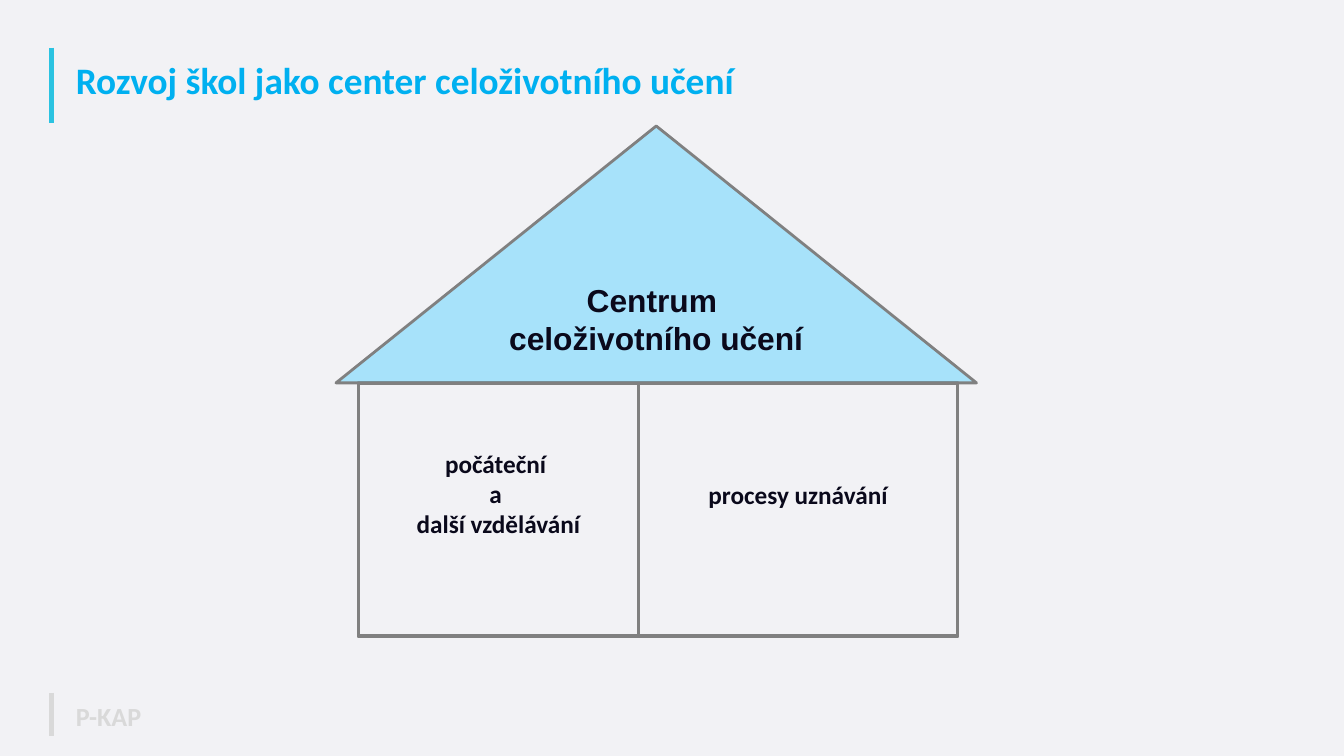
from dataclasses import dataclass
from typing import Optional

from lxml import etree
from pptx import Presentation
from pptx.dml.color import RGBColor
from pptx.enum.shapes import MSO_CONNECTOR, MSO_SHAPE
from pptx.enum.text import MSO_ANCHOR, PP_ALIGN
from pptx.oxml.ns import qn
from pptx.util import Pt

EMU_PER_PX = 9525

BACKGROUND = RGBColor(0xF2, 0xF2, 0xF5)
TURQUOISE = RGBColor(0x2B, 0xC3, 0xE1)
LIGHT_GRAY = RGBColor(0xD9, 0xD9, 0xD9)
TITLE_BLUE = RGBColor(0x00, 0xB0, 0xF0)
WALL_GRAY = RGBColor(0x80, 0x80, 0x80)
ROOF_BLUE = RGBColor(0x5D, 0xD4, 0xFF)
INK = RGBColor(0x0A, 0x09, 0x1B)

STRAIGHT = MSO_CONNECTOR.STRAIGHT
RECTANGLE = MSO_SHAPE.RECTANGLE
TRIANGLE = MSO_SHAPE.ISOSCELES_TRIANGLE
TOP, MIDDLE = MSO_ANCHOR.TOP, MSO_ANCHOR.MIDDLE
LEFT, CENTER = PP_ALIGN.LEFT, PP_ALIGN.CENTER

BAR_X = 74
LABEL_X = 99
ROOM_TOP, ROOM_HEIGHT = 547, 362


@dataclass(frozen=True)
class Bar:
    top: int
    bottom: int
    color: RGBColor


@dataclass(frozen=True)
class Label:
    text: str
    top: int
    width: int
    height: int
    size: int
    color: RGBColor


@dataclass(frozen=True)
class HousePart:
    text: str
    kind: MSO_SHAPE
    left: int
    top: int
    width: int
    height: int
    font: str
    size: int
    line_width: int
    anchor: MSO_ANCHOR
    text_offset: int = 5
    wrap: bool = True
    fill: Optional[RGBColor] = None
    opacity: int = 100


BARS = [Bar(68, 176, TURQUOISE), Bar(990, 1052, LIGHT_GRAY)]

LABELS = [
    Label("Rozvoj škol jako center celoživotního učení", 84, 1733, 68, 40, TITLE_BLUE),
    Label("P-KAP", 995, 300, 62, 28, LIGHT_GRAY),
]

HOUSE = [
    HousePart("počáteční \na \ndalší vzdělávání", RECTANGLE, 512, ROOM_TOP, 400, ROOM_HEIGHT,
              "Calibri", 27, 4, TOP, text_offset=93),
    HousePart("procesy uznávání", RECTANGLE, 912, ROOM_TOP, 456, ROOM_HEIGHT,
              "Calibri", 27, 4, TOP, text_offset=137),
    HousePart("Centrum \nceloživotního učení", TRIANGLE, 480, 180, 915, 367,
              "Arial", 34, 3, MIDDLE, wrap=False, fill=ROOF_BLUE, opacity=50),
]


def px(value: int) -> int:
    return value * EMU_PER_PX


def write_text(frame, text: str, font: str, size: int, color: RGBColor, align: PP_ALIGN) -> None:
    paragraph = frame.paragraphs[0]
    paragraph.text = text
    paragraph.alignment = align
    for run in paragraph.runs:
        run.font.name = font
        run.font.size = Pt(size)
        run.font.bold = True
        run.font.color.rgb = color


def draw_bar(slide, bar: Bar) -> None:
    line = slide.shapes.add_connector(STRAIGHT, px(BAR_X), px(bar.top), px(BAR_X), px(bar.bottom))
    line.line.color.rgb = bar.color
    line.line.width = Pt(5)
    etree.SubElement(line._element.spPr, qn("a:effectLst"))


def draw_label(slide, label: Label) -> None:
    box = slide.shapes.add_textbox(px(LABEL_X), px(label.top), px(label.width), px(label.height))
    frame = box.text_frame
    frame.word_wrap = True
    frame.vertical_anchor = MIDDLE
    write_text(frame, label.text, "Calibri", label.size, label.color, LEFT)
    frame.paragraphs[0].line_spacing = 0.9


def draw_house_part(slide, part: HousePart) -> None:
    shape = slide.shapes.add_shape(part.kind, px(part.left), px(part.top),
                                   px(part.width), px(part.height))
    shape.shadow.inherit = False
    shape.line.color.rgb = WALL_GRAY
    shape.line.width = Pt(part.line_width)
    if part.fill is None:
        shape.fill.background()
    else:
        shape.fill.solid()
        shape.fill.fore_color.rgb = part.fill
        color = shape._element.spPr.find(qn("a:solidFill"))[0]
        etree.SubElement(color, qn("a:alpha"), val=str(part.opacity * 1000))
    frame = shape.text_frame
    frame.word_wrap = part.wrap
    frame.vertical_anchor = part.anchor
    frame.margin_top = px(part.text_offset)
    write_text(frame, part.text, part.font, part.size, INK, CENTER)


def main() -> None:
    deck = Presentation()
    deck.slide_width, deck.slide_height = px(1920), px(1080)
    slide = deck.slides.add_slide(deck.slide_layouts[6])
    slide.background.fill.solid()
    slide.background.fill.fore_color.rgb = BACKGROUND

    # Title and footer with their accent bars
    for bar in BARS:
        draw_bar(slide, bar)
    for label in LABELS:
        draw_label(slide, label)

    # House: two rooms under a roof
    for part in HOUSE:
        draw_house_part(slide, part)

    deck.save("out.pptx")


if __name__ == "__main__":
    main()
